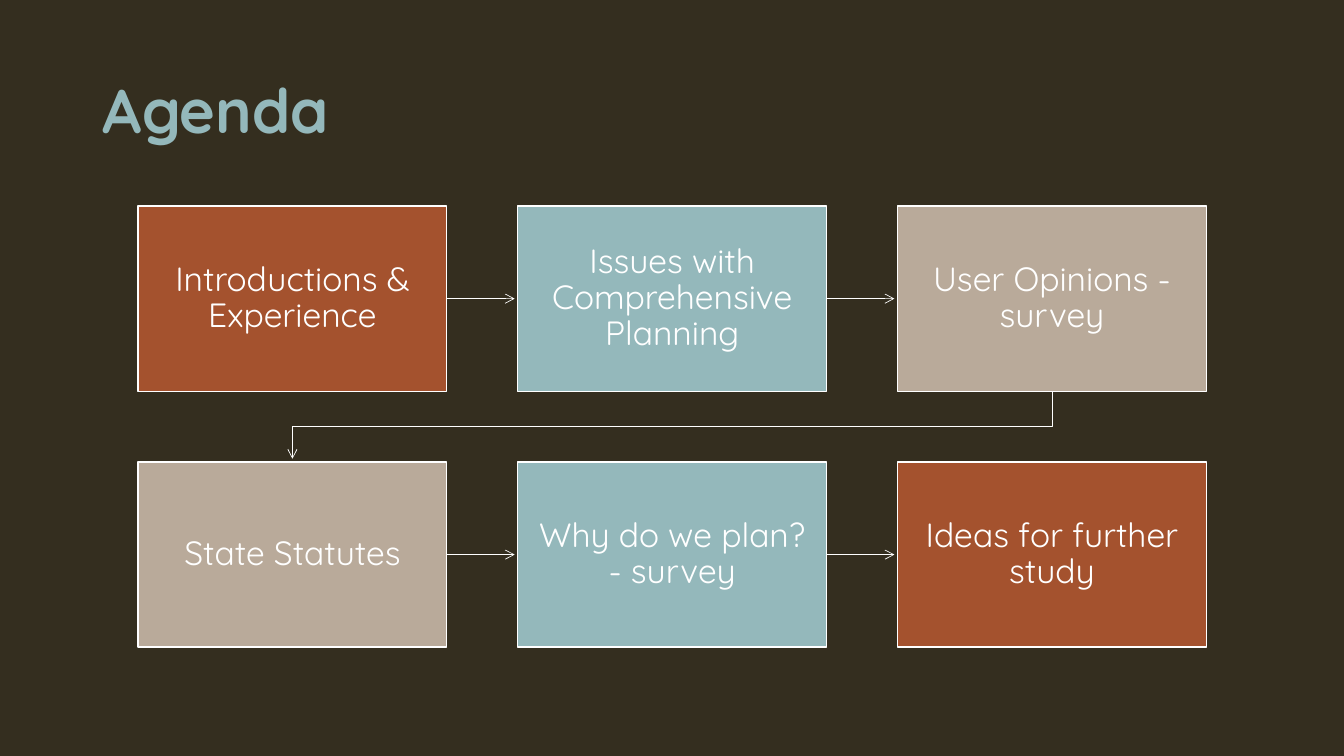
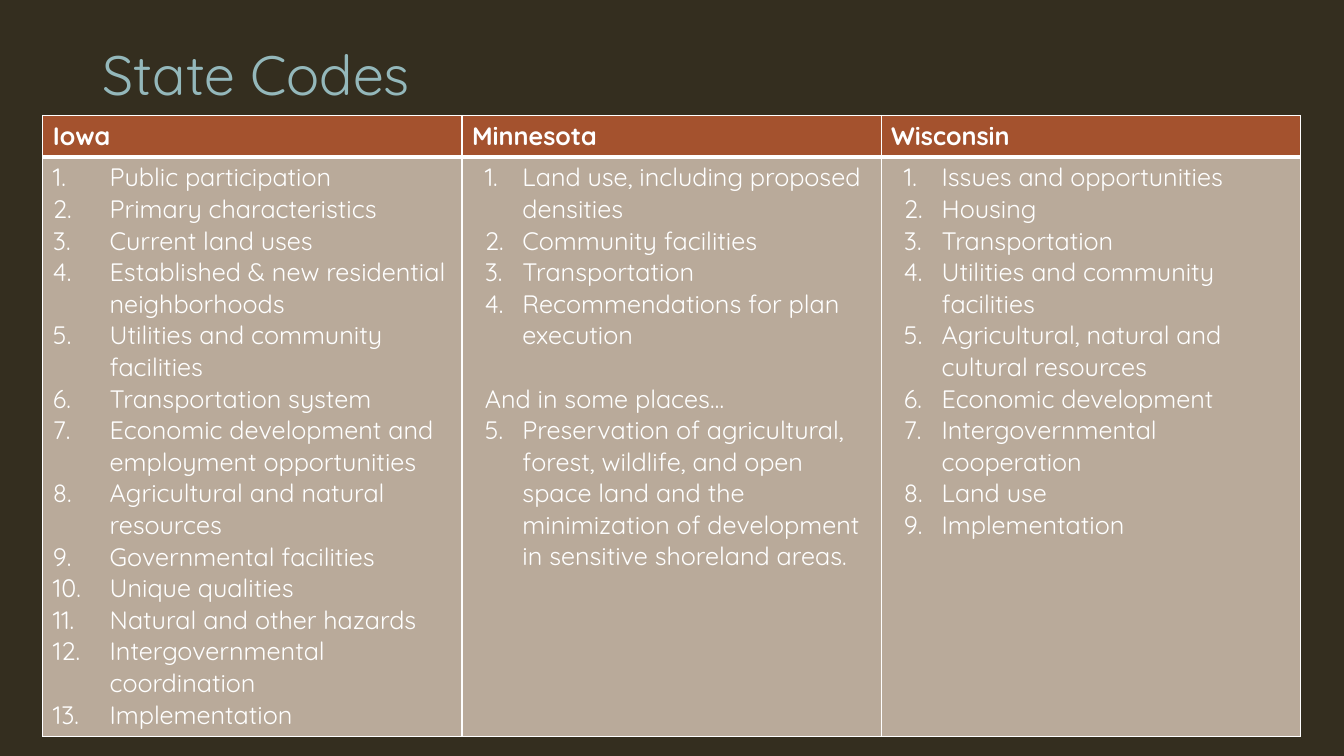
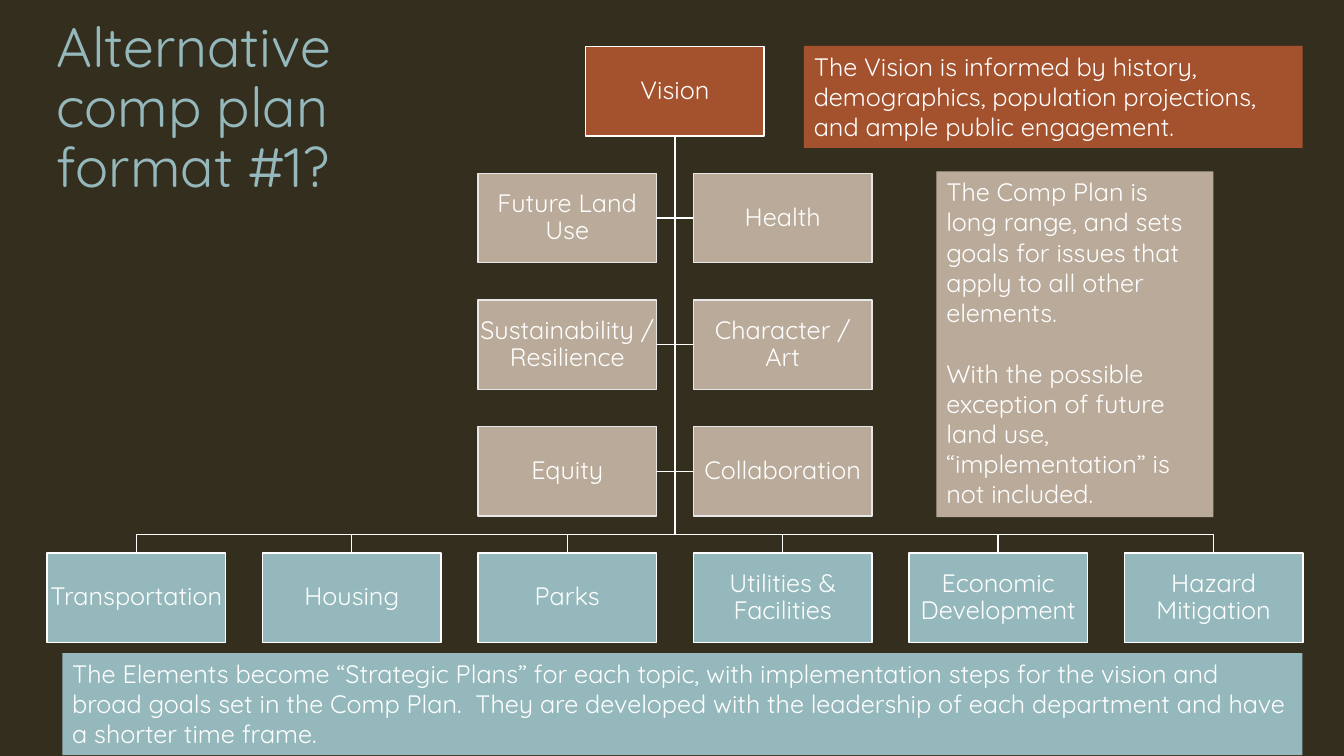
from dataclasses import dataclass
from itertools import pairwise

from lxml import etree
from pptx import Presentation
from pptx.dml.color import RGBColor
from pptx.enum.shapes import MSO_CONNECTOR, MSO_SHAPE
from pptx.enum.text import MSO_ANCHOR, MSO_AUTO_SIZE, PP_ALIGN
from pptx.oxml.ns import qn
from pptx.util import Cm, Pt

RECT = MSO_SHAPE.RECTANGLE
STRAIGHT = MSO_CONNECTOR.STRAIGHT
TOP, MIDDLE = MSO_ANCHOR.TOP, MSO_ANCHOR.MIDDLE
LEFT, CENTER = PP_ALIGN.LEFT, PP_ALIGN.CENTER
GROW = MSO_AUTO_SIZE.SHAPE_TO_FIT_TEXT

# Shared look
FONT = "Quicksand"
DARK, RUST, TEAL, TAUPE = "342E1F", "A4522E", "94B8BB", "B9AA9A"
WHITE, PALE = "FFFFFF", "E7E7E7"


@dataclass
class Box:
    """A rectangle in centimetres."""
    x: float
    y: float
    w: float
    h: float

    @property
    def cx(self) -> float:
        return self.x + self.w / 2

    @property
    def cy(self) -> float:
        return self.y + self.h / 2

    @property
    def right(self) -> float:
        return self.x + self.w

    @property
    def bottom(self) -> float:
        return self.y + self.h

    def emu(self) -> tuple:
        return Cm(self.x), Cm(self.y), Cm(self.w), Cm(self.h)


@dataclass
class Item:
    """A table paragraph; numbered ones may restart the count."""
    text: str
    numbered: bool = True
    start: int = 1
    before: float = 0


@dataclass
class Column:
    head: str
    margin: float
    hang: float
    items: list


def rgb(color: str) -> RGBColor:
    return RGBColor.from_string(color)


# Text
def write(tf, *texts: str, size: float = 18, color: str = WHITE, bold: bool = False,
          align=LEFT, anchor=TOP, spacing: float | None = None, gap: float = 0,
          inset: float | None = None) -> None:
    tf.word_wrap = True
    tf.vertical_anchor = anchor
    if inset is not None:
        tf.margin_left = tf.margin_right = tf.margin_top = tf.margin_bottom = Cm(inset)
    for i, text in enumerate(texts):
        p = tf.add_paragraph() if i else tf.paragraphs[0]
        p.alignment = align
        if spacing:
            p.line_spacing = spacing
        if i and gap:
            p.space_before = Pt(gap)
        r = p.add_run()
        r.text = text
        r.font.name, r.font.size, r.font.bold = FONT, Pt(size), bold
        r.font.color.rgb = rgb(color)


def add_title(s, text: str, box: Box, size: float = 39.6, bold: bool = False) -> None:
    sp = s.shapes.add_textbox(*box.emu())
    write(sp.text_frame, text, size=size, color=TEAL, bold=bold, anchor=MIDDLE, spacing=0.9)


# Shapes and lines
def add_rect(s, box: Box, fill: str, line: str | None = None):
    sp = s.shapes.add_shape(RECT, *box.emu())
    sp.shadow.inherit = False
    sp.fill.solid()
    sp.fill.fore_color.rgb = rgb(fill)
    if line:
        sp.line.color.rgb = rgb(line)
        sp.line.width = Pt(1)
    else:
        sp.line.fill.background()
    return sp


def add_node(s, box: Box, text: str, fill: str, line: str = WHITE,
             size: float = 18, inset: float = 0.03) -> None:
    sp = add_rect(s, box, fill, line)
    write(sp.text_frame, text, size=size, align=CENTER, anchor=MIDDLE,
          spacing=0.9, inset=inset)


def add_callout(s, box: Box, fill: str, *texts: str) -> None:
    tf = add_rect(s, box, fill).text_frame
    write(tf, *texts, gap=21.6)
    tf.auto_size = GROW


def add_line(s, *points: tuple, width: float = 1, arrow: bool = False) -> None:
    """A straight connector for two points, a bent line for more."""
    pts = [(Cm(x), Cm(y)) for x, y in points]
    if len(pts) == 2:
        sp = s.shapes.add_connector(STRAIGHT, *pts[0], *pts[1])
        etree.SubElement(sp._element.spPr, qn("a:effectLst"))
    else:
        fb = s.shapes.build_freeform(*pts[0])
        fb.add_line_segments(pts[1:], close=False)
        sp = fb.convert_to_shape()
        sp.shadow.inherit = False
        sp.fill.background()
    sp.line.color.rgb = rgb(WHITE)
    sp.line.width = Pt(width)
    if arrow:
        etree.SubElement(sp.line._get_or_add_ln(), qn("a:tailEnd"), type="arrow")


# Table parts
def style_cell(cell, fill: str, top: float = 1, bottom: float = 1) -> None:
    cell.fill.solid()
    cell.fill.fore_color.rgb = rgb(fill)
    tcPr = cell._tc.get_or_add_tcPr()
    sides = (("lnL", 1), ("lnR", 1), ("lnT", top), ("lnB", bottom))
    for i, (side, width) in enumerate(sides):
        ln = etree.Element(qn(f"a:{side}"), w=str(Pt(width)))
        solid = etree.SubElement(ln, qn("a:solidFill"))
        etree.SubElement(solid, qn("a:srgbClr"), val=WHITE)
        tcPr.insert(i, ln)


def format_item(p, item: Item, margin: float, hang: float) -> None:
    pPr = p._p.get_or_add_pPr()
    if item.numbered:
        pPr.set("marL", str(Cm(margin)))
        pPr.set("indent", str(-Cm(hang)))
        num = etree.SubElement(pPr, qn("a:buAutoNum"), type="arabicPeriod")
        if item.start > 1:
            num.set("startAt", str(item.start))
    else:
        pPr.set("marL", str(Cm(margin - hang)))
        pPr.set("indent", "0")
    if item.before:
        p.space_before = Pt(item.before)


# Slides
def agenda(s) -> None:
    add_title(s, "Agenda", Box(2.34, 1.02, 29.21, 3.68), size=44, bold=True)
    steps = [
        ("Introductions & Experience", RUST),
        ("Issues with Comprehensive Planning", TEAL),
        ("User Opinions - survey", TAUPE),
        ("State Statutes", TAUPE),
        ("Why do we plan? - survey", TEAL),
        ("Ideas for further study", RUST),
    ]
    boxes = [Box(3.48 + i % 3 * 9.57, 5.19 + i // 3 * 6.45, 7.78, 4.67)
             for i in range(len(steps))]
    clear = 0.08
    for a, b in pairwise(boxes):
        if a.y == b.y:
            points = [(a.right, a.cy), (b.x - clear, b.cy)]
        else:
            mid = (a.bottom + b.y) / 2
            points = [(a.cx, a.bottom), (a.cx, mid), (b.cx, mid), (b.cx, b.y - clear)]
        add_line(s, *points, width=0.5, arrow=True)
    for box, (text, fill) in zip(boxes, steps):
        add_node(s, box, text, fill, size=24, inset=0.48)


def state_codes(s) -> None:
    add_title(s, "State Codes", Box(2.34, 1.01, 29.21, 1.88))
    iowa = [
        "Public participation", "Primary characteristics", "Current land uses",
        "Established & new residential neighborhoods",
        "Utilities and community facilities", "Transportation system",
        "Economic development and employment opportunities",
        "Agricultural and natural resources", "Governmental facilities",
        "Unique qualities", "Natural and other hazards",
        "Intergovernmental coordination", "Implementation",
    ]
    minnesota = [
        "Land use, including proposed densities", "Community facilities",
        "Transportation", "Recommendations for plan execution",
    ]
    shoreland = ("Preservation of agricultural, forest, wildlife, and open space land and "
                 "the minimization of development in sensitive shoreland areas.")
    wisconsin = [
        "Issues and opportunities", "Housing", "Transportation",
        "Utilities and community facilities",
        "Agricultural, natural and cultural resources", "Economic development",
        "Intergovernmental cooperation", "Land use", "Implementation",
    ]
    columns = [
        Column("Iowa", 1.43, 1.43, [Item(t) for t in iowa]),
        Column("Minnesota", 1.27, 0.95, [
            *[Item(t) for t in minnesota],
            Item("And in some places…", numbered=False, before=22.5),
            Item(shoreland, start=5),
        ]),
        Column("Wisconsin", 1.27, 0.95, [Item(t) for t in wisconsin]),
    ]
    area = Box(1.08, 2.91, 31.69, 15.64)
    table = s.shapes.add_table(2, len(columns), *area.emu()).table
    head_h = 1.04
    table.rows[0].height = Cm(head_h)
    table.rows[1].height = Cm(area.h - head_h)
    for i, col in enumerate(columns):
        table.columns[i].width = Cm(area.w / len(columns))
        head, body = table.cell(0, i), table.cell(1, i)
        style_cell(head, RUST, bottom=3)
        style_cell(body, TAUPE, top=3)
        write(head.text_frame, col.head, bold=True)
        write(body.text_frame, *[item.text for item in col.items])
        for p, item in zip(body.text_frame.paragraphs, col.items):
            format_item(p, item, col.margin, col.hang)


def plan_format(s) -> None:
    axis, top, w, h = 17.01, 1.18, 4.5, 2.25
    pitch_x, pitch_y = 5.43, 3.19

    def node_box(col: float, row: int) -> Box:
        """Columns count from the axis, rows from the top."""
        return Box(axis + col * pitch_x - w / 2, top + row * pitch_y, w, h)

    goals = [
        ("Future Land Use", "Health"),
        ("Sustainability / Resilience", "Character / Art"),
        ("Equity", "Collaboration"),
    ]
    elements = ["Transportation", "Housing", "Parks", "Utilities & Facilities",
                "Economic Development", "Hazard Mitigation"]
    vision = node_box(0, 0)
    goal_rows = [(node_box(-0.5, row), node_box(0.5, row)) for row in (1, 2, 3)]
    element_boxes = [node_box(i - 2.5, 4) for i in range(len(elements))]

    # Tree lines, each from the vision to one box
    start = (vision.cx, vision.bottom)
    for left, right in goal_rows:
        for edge in (left.right, right.x):
            add_line(s, start, (axis, left.cy), (edge, left.cy))
    for box in element_boxes:
        bus = box.y - 0.47
        add_line(s, start, (axis, bus), (box.cx, bus), (box.cx, box.y))

    # Tree boxes
    add_node(s, vision, "Vision", RUST)
    for boxes, names in zip(goal_rows, goals):
        for box, name in zip(boxes, names):
            add_node(s, box, name, TAUPE, line=PALE)
    for box, name in zip(element_boxes, elements):
        add_node(s, box, name, TEAL)

    # Title and callouts
    add_title(s, "Alternative comp plan format #1?", Box(1.17, 0.92, 10.41, 3.68))
    add_callout(s, Box(23.6, 4.32, 6.98, 8.71), TAUPE,
                "The Comp Plan is long range, and sets goals for issues that apply "
                "to all other elements.",
                "With the possible exception of future land use, “implementation” "
                "is not included.")
    add_callout(s, Box(1.57, 16.46, 31.25, 2.57), TEAL,
                "The Elements become “Strategic Plans” for each topic, with implementation "
                "steps for the vision and broad goals set in the Comp Plan.  They are "
                "developed with the leadership of each department and have a shorter "
                "time frame.")
    add_callout(s, Box(20.26, 1.16, 12.57, 2.57), RUST,
                "The Vision is informed by history, demographics, population projections, "
                "and ample public engagement.")


def main() -> None:
    prs = Presentation()
    prs.slide_width, prs.slide_height = Cm(33.87), Cm(19.05)
    fill = prs.slide_master.background.fill
    fill.solid()
    fill.fore_color.rgb = rgb(DARK)
    for build in (agenda, state_codes, plan_format):
        build(prs.slides.add_slide(prs.slide_layouts[6]))
    prs.save("out.pptx")


if __name__ == "__main__":
    main()
